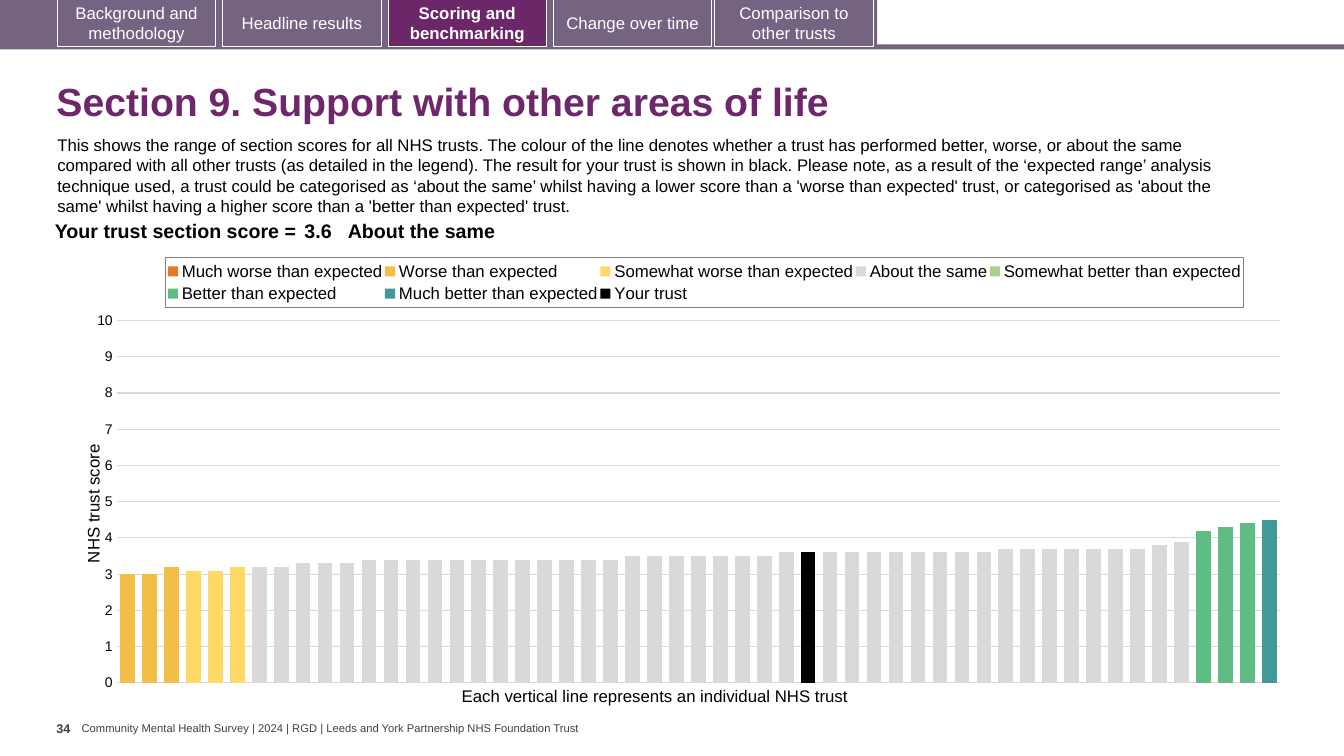
"""Build the Section 9 benchmarking slide with its trust score chart."""
import copy
from dataclasses import dataclass

import pptx
import pptx.chart.axis
import pptx.chart.data
import pptx.dml.color
import pptx.enum.chart
import pptx.enum.shapes
import pptx.enum.text
import pptx.oxml
import pptx.oxml.ns
import pptx.util
from pptx.util import Inches

ALIGN = pptx.enum.text.PP_ALIGN
ANCHOR = pptx.enum.text.MSO_ANCHOR
qn = pptx.oxml.ns.qn


@dataclass(frozen=True)
class Theme:
    font: str = "Arial"
    chart_font: str = "Calibri"
    text: str = "000000"
    muted: str = "404040"
    white: str = "FFFFFF"
    bar: str = "756382"
    active: str = "6B2768"
    title: str = "6D276A"
    grid: str = "D9D9D9"
    legend_line: str = "808080"
    title_size: float = 28
    score_size: float = 14
    body_size: float = 12
    axis_size: float = 10
    page_size: float = 9
    footer_size: float = 8


THEME = Theme()
TRUST_COUNT = 53
TABS = [
    (0.57, "Background and methodology"),
    (2.21, "Headline results"),
    (3.85, "Scoring and benchmarking"),
    (5.49, "Change over time"),
    (7.09, "Comparison to other trusts"),
]
ACTIVE_TAB = "Scoring and benchmarking"
INTRO = (
    "This shows the range of section scores for all NHS trusts. The colour of the line denotes "
    "whether a trust has performed better, worse, or about the same compared with all other trusts "
    "(as detailed in the legend). The result for your trust is shown in black. Please note, as a "
    "result of the ‘expected range’ analysis technique used, a trust could be categorised as ‘about "
    "the same’ whilst having a lower score than a 'worse than expected' trust, or categorised as "
    "'about the same' whilst having a higher score than a 'better than expected' trust."
)
FOOTER = "Community Mental Health Survey | 2024 | RGD | Leeds and York Partnership NHS Foundation Trust"
SAME_SCORES = ([3.2] * 2 + [3.3] * 3 + [3.4] * 12 + [3.5] * 7 + [3.6] * 10
               + [3.7] * 7 + [3.8, 3.9])
BANDS = [
    ("Much worse than expected", "E87722", 0, []),
    ("Worse than expected", "F1BE48", 0, [3, 3, 3.2]),
    ("Somewhat worse than expected", "FFD966", 3, [3.1, 3.1, 3.2]),
    ("About the same", "D9D9D9", 6, SAME_SCORES),
    ("Somewhat better than expected", "A9D18E", 0, []),
    ("Better than expected", "5FBD83", 49, [4.2, 4.3, 4.4]),
    ("Much better than expected", "419999", 52, [4.5]),
    ("Your trust", "000000", 31, [3.6]),
]


def rgb(value):
    return pptx.dml.color.RGBColor.from_string(value)


def style_font(font, size, color=THEME.text, bold=False, name=THEME.font):
    font.name, font.size, font.bold = name, pptx.util.Pt(size), bold
    font.color.rgb = rgb(color)


def write(frame, text, size, color=THEME.text, bold=False, align=ALIGN.LEFT):
    frame.text = text
    para = frame.paragraphs[0]
    para.alignment = align
    style_font(para.runs[0].font, size, color, bold)
    return para


def add_text(page, place, text, size, color=THEME.text, bold=False, wrap=False,
             insets=(0.1, 0.05), anchor=ANCHOR.TOP):
    frame = page.shapes.add_textbox(*map(Inches, place)).text_frame
    frame.word_wrap = wrap
    frame.margin_left = frame.margin_right = Inches(insets[0])
    frame.margin_top = frame.margin_bottom = Inches(insets[1])
    frame.vertical_anchor = anchor
    write(frame, text, size, color, bold)


def add_bar(page, place, fill, line=None):
    bar = page.shapes.add_shape(pptx.enum.shapes.MSO_SHAPE.RECTANGLE, *map(Inches, place))
    bar.shadow.inherit = False
    bar.fill.solid()
    bar.fill.fore_color.rgb = rgb(fill)
    if line:
        bar.line.color.rgb = rgb(line)
        bar.line.width = pptx.util.Pt(0.75)
    else:
        bar.line.fill.background()
    return bar


def add_tab(page, left, label):
    active = label == ACTIVE_TAB
    tab = add_bar(page, (left, -0.01, 1.57, 0.47), THEME.active if active else THEME.bar, THEME.white)
    tab.text_frame.word_wrap = True
    tab.text_frame.vertical_anchor = ANCHOR.MIDDLE
    write(tab.text_frame, label, THEME.body_size, THEME.white, active, ALIGN.CENTER)


def set_title(page, text):
    title = page.shapes.title
    title.left, title.top, title.width, title.height = map(Inches, (0.46, 0.67, 12.49, 0.72))
    title.text_frame.auto_size = pptx.enum.text.MSO_AUTO_SIZE.NONE
    title.text_frame.vertical_anchor = ANCHOR.MIDDLE
    write(title.text_frame, text, THEME.title_size, THEME.title, True).line_spacing = 0.9


def add_score_table(page):
    columns = [
        ("Your trust section score =", 2.63, 0.04, ALIGN.RIGHT),
        ("3.6", 0.47, 0.04, ALIGN.LEFT),
        ("About the same", 8.59, 0, ALIGN.LEFT),
    ]
    table = page.shapes.add_table(1, 3, *map(Inches, (0.35, 2.15, 11.7, 0.22))).table
    table.first_row = table.horz_banding = False
    for index, (text, width, inset, align) in enumerate(columns):
        table.columns[index].width = Inches(width)
        cell = table.cell(0, index)
        cell.fill.background()
        cell.margin_left = cell.margin_right = Inches(inset)
        cell.margin_top = cell.margin_bottom = Inches(0.04)
        write(cell.text_frame, text, THEME.score_size, bold=True, align=align)


def place_part(element, index, inner=False, **fractions):
    for old in element.findall(qn("c:layout")):
        element.remove(old)
    target = '<c:layoutTarget val="inner"/>' if inner else ""
    modes = "".join(f'<c:{key}Mode val="edge"/>' for key in "xy")
    sizes = "".join(f'<c:{key} val="{value}"/>' for key, value in fractions.items())
    element.insert(index, pptx.oxml.parse_xml(
        f'<c:layout {pptx.oxml.ns.nsdecls("c")}><c:manualLayout>{target}{modes}{sizes}'
        "</c:manualLayout></c:layout>"))


def move_last_series_to_right_axis(plot_area):
    left_bars = plot_area.find(qn("c:barChart"))
    right_bars = copy.deepcopy(left_bars)
    left_bars.remove(left_bars.findall(qn("c:ser"))[-1])
    for series in right_bars.findall(qn("c:ser"))[:-1]:
        right_bars.remove(series)
    left_bars.addnext(right_bars)
    axes = [copy.deepcopy(plot_area.find(qn(tag))) for tag in ("c:catAx", "c:valAx")]
    ids = ["5001", "5002"]
    for axis, own, other, link in zip(axes, ids, ids[::-1], right_bars.findall(qn("c:axId"))):
        link.set("val", own)
        axis.find(qn("c:axId")).set("val", own)
        axis.find(qn("c:crossAx")).set("val", other)
    plot_area.find(qn("c:valAx")).addnext(axes[1])
    axes[1].addnext(axes[0])
    axes[1].find(qn("c:axPos")).set("val", "r")
    axes[1].find(qn("c:crosses")).set("val", "max")
    right = pptx.chart.axis.ValueAxis(axes[1])
    right.has_title = right.has_major_gridlines = False
    right.major_tick_mark = pptx.enum.chart.XL_TICK_MARK.OUTSIDE
    right.tick_label_position = pptx.enum.chart.XL_TICK_LABEL_POSITION.NONE


def style_value_axis(axis):
    axis.minimum_scale, axis.maximum_scale, axis.major_unit = 0, 10, 1
    axis.major_tick_mark = pptx.enum.chart.XL_TICK_MARK.NONE
    axis.format.line.fill.background()
    axis.major_gridlines.format.line.color.rgb = rgb(THEME.grid)
    axis.major_gridlines.format.line.width = pptx.util.Pt(0.75)
    style_font(axis.tick_labels.font, THEME.axis_size)
    write(axis.axis_title.text_frame, "NHS trust score", THEME.body_size)
    place_part(axis.axis_title._element, 1, x=0.01, y=0.43)


def add_score_chart(page):
    data = pptx.chart.data.CategoryChartData()
    data.categories = [str(number + 1) for number in range(TRUST_COUNT)]
    for name, _, start, scores in BANDS:
        after = TRUST_COUNT - start - len(scores)
        data.add_series(name, [None] * start + scores + [None] * after)
    chart = page.shapes.add_chart(pptx.enum.chart.XL_CHART_TYPE.COLUMN_CLUSTERED,
                                  *map(Inches, (0.67, 2.47, 12.15, 4.44)), data).chart
    chart.has_title = False
    style_font(chart.font, THEME.axis_size, name=THEME.chart_font)
    plot = chart.plots[0]
    plot.gap_width, plot.overlap, plot.vary_by_categories = 50, 100, False
    for series, (_, color, _, _) in zip(plot.series, BANDS):
        series.format.fill.solid()
        series.format.fill.fore_color.rgb = rgb(color)
    chart.category_axis.visible = False
    style_value_axis(chart.value_axis)
    chart.has_legend = True
    chart.legend.position = pptx.enum.chart.XL_LEGEND_POSITION.TOP
    chart.legend.include_in_layout = False
    style_font(chart.legend.font, THEME.body_size)
    legend = chart.legend._element
    place_part(legend, 1, x=0.08, y=0.02, w=0.88, h=0.11)
    legend.find(qn("c:txPr")).addprevious(pptx.oxml.parse_xml(
        f'<c:spPr {pptx.oxml.ns.nsdecls("c", "a")}><a:ln w="9525"><a:solidFill>'
        f'<a:srgbClr val="{THEME.legend_line}"/></a:solidFill></a:ln></c:spPr>'))
    plot_area = chart._chartSpace.find(f'{qn("c:chart")}/{qn("c:plotArea")}')
    place_part(plot_area, 0, inner=True, x=0.04, y=0.16, w=0.95, h=0.81)
    move_last_series_to_right_axis(plot_area)


def main():
    deck = pptx.Presentation()
    deck.slide_width, deck.slide_height = Inches(13.33), Inches(7.5)
    page = deck.slides.add_slide(deck.slide_layouts[5])
    add_bar(page, (0, 0.44, 13.33, 0.05), THEME.bar)
    add_bar(page, (0, 0, 8.7, 0.47), THEME.bar)
    for left, label in TABS:
        add_tab(page, left, label)
    set_title(page, "Section 9. Support with other areas of life")
    add_text(page, (0.47, 1.29, 12.13, 0.91), INTRO, THEME.body_size, wrap=True)
    add_score_chart(page)
    add_score_table(page)
    add_text(page, (4.48, 6.75, 4.11, 0.3), "Each vertical line represents an individual NHS trust",
             THEME.body_size)
    add_text(page, (0.56, 7.1, 0.25, 0.4), "34", THEME.page_size, THEME.muted, True, insets=(0, 0.05))
    add_text(page, (0.81, 7.16, 5.01, 0.13), FOOTER, THEME.footer_size, THEME.muted,
             insets=(0, 0), anchor=ANCHOR.MIDDLE)
    deck.save("out.pptx")


if __name__ == "__main__":
    main()
